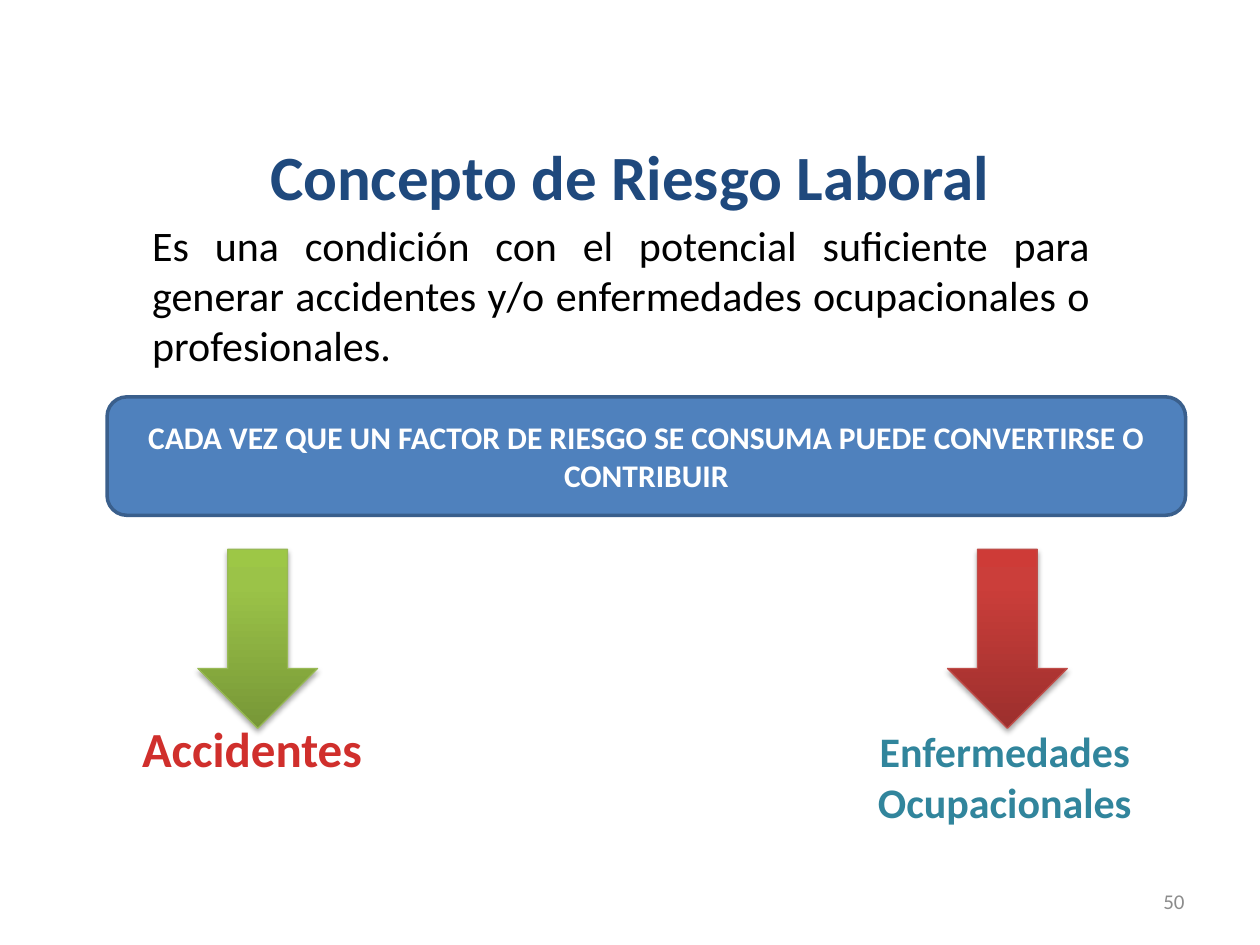
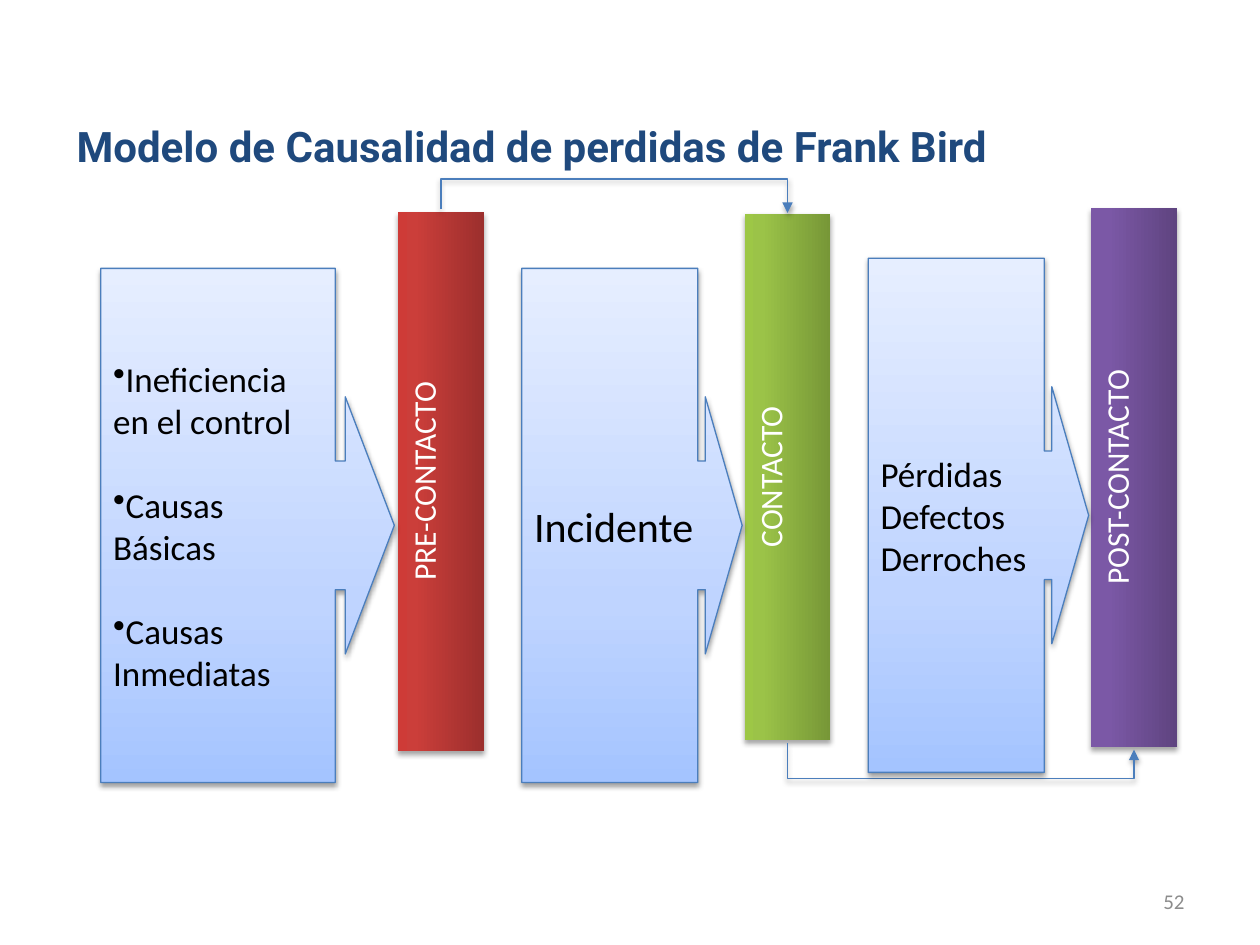
from dataclasses import dataclass

from lxml.etree import SubElement
from pptx import Presentation
from pptx.dml.color import RGBColor as Rgb
from pptx.enum.shapes import MSO_CONNECTOR as Link, MSO_SHAPE as Form
from pptx.enum.text import MSO_ANCHOR as Anchor, MSO_AUTO_SIZE as Auto, PP_ALIGN as Align
from pptx.oxml.ns import qn
from pptx.util import Inches, Pt


@dataclass(frozen=True)
class Theme:
    font: str = "Calibri"
    alt: str = "Roboto"
    navy: str = "1F497D"
    black: str = "000000"
    white: str = "FFFFFF"
    gray: str = "8C8C8C"
    teal: str = "31859C"
    blue: str = "4F81BD"
    edge: str = "3A5F8C"
    rim: str = "4B7EBC"
    green: tuple = ((0, "779737"), (80, "9BC348"), (100, "9DC746"))
    red: tuple = ((0, "9C2F2D"), (80, "CB3E3A"), (100, "CE3B37"))
    plum: tuple = ((0, "5F4480"), (80, "7B58A6"), (100, "7C57A8"))
    sky: tuple = ((0, "A4C4FF"), (35, "BFD4FF"), (100, "E6EEFF"))
    flame: tuple = ((0, "FC7C7A"), (75, "D02F2C"), (100, "C70500"))
    title: int = 36
    large: int = 28
    body: int = 24
    item: int = 20
    label: int = 18
    small: int = 12


T = Theme()


def paint(fill, host, color, angle=90):
    """Fill with one colour, or with (percent, colour) stops."""
    if isinstance(color, str):
        fill.solid()
        fill.fore_color.rgb = Rgb.from_string(color)
        return
    fill.gradient()
    fill.gradient_angle = angle
    stops = host.find(qn("a:gradFill")).find(qn("a:gsLst"))
    for old in list(stops):
        stops.remove(old)
    for pos, tint in color:
        stop = SubElement(stops, qn("a:gs"), pos=str(pos * 1000))
        SubElement(stop, qn("a:srgbClr"), val=tint)


def shade(props, alpha, dist):
    """Cast a soft shadow straight down."""
    box = props.find(qn("a:effectLst"))
    if box is None:
        box = SubElement(props, qn("a:effectLst"))
    cast = SubElement(box, qn("a:outerShdw"), blurRad=str(Pt(3.1)), dist=str(Pt(dist)),
                      dir="5400000", rotWithShape="0")
    tint = SubElement(cast, qn("a:srgbClr"), val=T.black)
    SubElement(tint, qn("a:alpha"), val=str(alpha * 1000))


def write(shape, text, size, color, font=T.font, bold=False, align=Align.LEFT,
          anchor=Anchor.TOP, wrap=True, grow=False, bullet=False, gap=0):
    frame = shape.text_frame
    frame.word_wrap = wrap
    frame.vertical_anchor = anchor
    frame.auto_size = Auto.SHAPE_TO_FIT_TEXT if grow else Auto.NONE
    for i, line in enumerate(text.split("\n")):
        para = frame.paragraphs[0] if i == 0 else frame.add_paragraph()
        para.alignment = align
        if i and gap:
            para.space_before = Pt(gap)
        if bullet:
            SubElement(para._p.get_or_add_pPr(), qn("a:buChar"), char="•")
        run = para.add_run()
        run.text = line
        run.font.size, run.font.bold, run.font.name = Pt(size), bold, font
        paint(run.font.fill, run._r.rPr, color, 270)


def label(slide, box, text, size, color, **style):
    write(slide.shapes.add_textbox(*map(Inches, box)), text, size, color, **style)


def block(slide, form, box, fill, line=None, width=0.75, cast=None):
    shape = slide.shapes.add_shape(form, *map(Inches, box))
    shape.shadow.inherit = False
    props = shape._element.spPr
    paint(shape.fill, props, fill)
    if line:
        shape.line.color.rgb = Rgb.from_string(line)
        shape.line.width = Pt(width)
    else:
        shape.line.fill.background()
    if cast:
        shade(props, *cast)
    return shape


def bar(slide, mid, top, tall, text, fill):
    """A rectangle turned to read upwards, centred on x = mid."""
    wide = 0.68
    box = (mid - tall / 2, top + (tall - wide) / 2, tall, wide)
    shape = block(slide, Form.RECTANGLE, box, fill, cast=(35, 1.8))
    shape.rotation = 270
    write(shape, text, T.label, T.white, align=Align.CENTER, grow=True)


def callout(slide, box, head, text, size, **style):
    shape = block(slide, Form.RIGHT_ARROW_CALLOUT, box, T.sky, T.rim, cast=(38, 1.6))
    for i, value in enumerate((head, head, 0.167, 0.799)):
        shape.adjustments[i] = value
    write(shape, text, size, T.black, anchor=Anchor.MIDDLE, **style)


def elbow(slide, start, end, rail):
    """A bent arrow whose long run lies at y = rail."""
    (x1, y1), (x2, y2) = start, end
    midx, midy = (x1 + x2) / 2, (y1 + y2) / 2
    dx, dy = (y2 - y1) / 2, (x2 - x1) / 2
    # Laid out upright, then turned a quarter
    ends = (midx - dx, midy + dy, midx + dx, midy - dy)
    wire = slide.shapes.add_connector(Link.ELBOW, *map(Inches, ends))
    wire.line.color.rgb = Rgb.from_string(T.rim)
    wire.line.width = Pt(0.75)
    props = wire._element.spPr
    props.find(qn("a:xfrm")).set("rot", "5400000")
    bend = round((rail - y1) / (y2 - y1) * 100000)
    SubElement(props.find(qn("a:prstGeom")).find(qn("a:avLst")), qn("a:gd"),
               name="adj1", fmla=f"val {bend}")
    SubElement(props.find(qn("a:ln")), qn("a:tailEnd"), type="triangle")
    shade(props, 38, 1.6)


def page(deck, number):
    slide = deck.slides.add_slide(deck.slide_layouts[6])
    label(slide, (7.17, 6.95, 2.33, 0.4), number, T.small, T.gray,
          align=Align.RIGHT, anchor=Anchor.MIDDLE)
    return slide


def concept(deck):
    slide = page(deck, "50")
    label(slide, (1.11, 1.69, 7.64, 1.31),
          "Es una condición con el potencial suficiente para generar accidentes y/o "
          "enfermedades ocupacionales o profesionales.",
          T.body, T.black, align=Align.JUSTIFY, grow=True)
    head = dict(bold=True, align=Align.CENTER, grow=True)
    label(slide, (0, 1.04, 10, 0.71), "Concepto de Riesgo Laboral", T.title, T.navy, **head)

    # Two outcomes under their arrows
    label(slide, (0.85, 5.65, 2.3, 0.57), "Accidentes", T.large, T.flame, wrap=False, **head)
    label(slide, (6.26, 5.71, 3.43, 0.91), "Enfermedades Ocupacionales",
          T.body, T.teal, **head)
    for left, fill, line in ((1.57, T.green, "98B955"), (7.52, T.red, "BF4C48")):
        block(slide, Form.DOWN_ARROW, (left, 4.36, 0.95, 1.42), fill, line, cast=(35, 1.8))

    # Banner
    banner = block(slide, Form.ROUNDED_RECTANGLE, (0.85, 3.15, 8.56, 0.94),
                   T.blue, T.edge, 2)
    write(banner, "CADA VEZ QUE UN FACTOR DE RIESGO SE CONSUMA PUEDE CONVERTIRSE O CONTRIBUIR",
          T.label, T.white, bold=True, align=Align.CENTER, anchor=Anchor.MIDDLE)


def model(deck):
    slide = page(deck, "52")
    pre, hit, post = (3.5 + 2.75 * i for i in range(3))

    # Stages
    bar(slide, hit, 1.7, 4.17, "CONTACTO", T.green)
    bar(slide, pre, 1.68, 4.28, "PRE-CONTACTO", T.red)
    bar(slide, post, 1.65, 4.28, "POST-CONTACTO", T.plum)

    # Links between stages
    elbow(slide, (pre, 1.66), (hit, 1.69), 1.42)
    elbow(slide, (hit, 5.9), (post, 5.95), 6.18)

    # Causes and effects
    callout(slide, (0.8, 2.13, 2.33, 4.08), 0.438,
            "Ineficiencia en el control\nCausas Básicas\nCausas Inmediatas",
            T.item, bullet=True, gap=24)
    callout(slide, (4.14, 2.13, 1.75, 4.08), 0.583, "Incidente", T.body, wrap=False)
    callout(slide, (6.89, 2.05, 1.75, 4.08), 0.583, "Pérdidas\nDefectos\nDerroches",
            T.item, wrap=False)
    label(slide, (0.51, 0.91, 8.23, 0.5), "Modelo de Causalidad de perdidas de Frank Bird",
          T.body, T.navy, font=T.alt, bold=True, wrap=False, grow=True)


def main():
    deck = Presentation()
    deck.slide_width, deck.slide_height = Inches(10), Inches(7.5)
    concept(deck)
    model(deck)
    deck.save("out.pptx")


if __name__ == "__main__":
    main()
